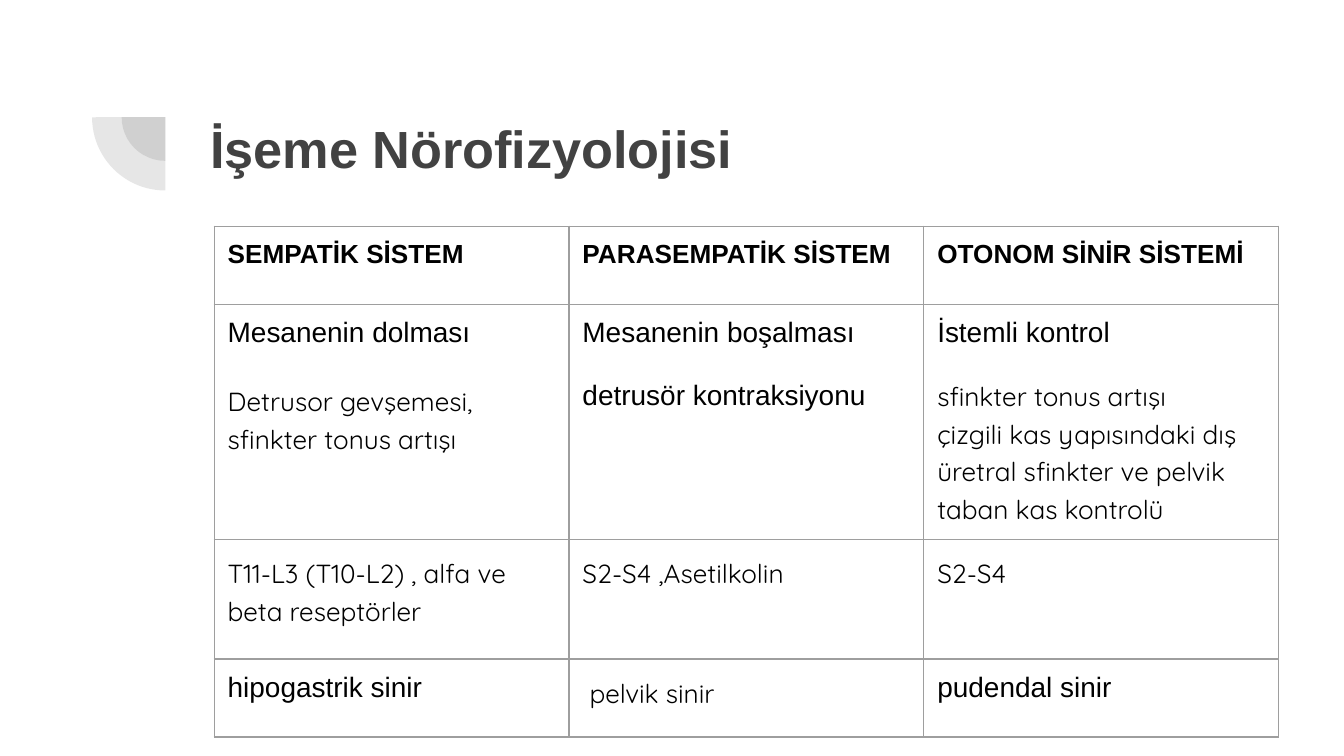
from lxml import etree
from pptx import Presentation
from pptx import util as u
from pptx.dml import color
from pptx.enum import shapes, text
from pptx.oxml import ns

GRID = 0.1
PADDING = 1


def cells(count):
    return u.Inches(count * GRID)


def rgb(value):
    return color.RGBColor.from_string(value)


def write(paragraph, content, font="Arial", size=15, bold=False, ink="000000",
          line_spacing=1, space_after=0):
    paragraph.alignment = text.PP_ALIGN.LEFT
    paragraph.line_spacing = line_spacing
    paragraph.space_before = u.Pt(0)
    paragraph.space_after = u.Pt(space_after)
    run = paragraph.add_run()
    run.text = content
    run.font.name = font
    run.font.size = u.Pt(size)
    run.font.bold = bold
    run.font.color.rgb = rgb(ink)


class SlideBuilder:
    GREY = "424242"
    BORDER = "9E9E9E"
    BORDER_WIDTH = 0.75

    def __init__(self, presentation):
        self.slide = presentation.slides.add_slide(presentation.slide_layouts[5])
        self.slide.background.fill.solid()
        self.slide.background.fill.fore_color.rgb = rgb("FFFFFF")

    def title(self, content, left, top, width, height):
        shape = self.slide.shapes.title
        shape.left, shape.top = cells(left), cells(top)
        shape.width, shape.height = cells(width), cells(height)
        frame = shape.text_frame
        frame.word_wrap = True
        frame.auto_size = text.MSO_AUTO_SIZE.NONE
        frame.vertical_anchor = text.MSO_ANCHOR.TOP
        frame.margin_left = frame.margin_right = cells(PADDING)
        frame.margin_top = frame.margin_bottom = cells(PADDING)
        write(frame.paragraphs[0], content, size=28, bold=True, ink=self.GREY)

    def quarter(self, center_x, center_y, radius, opacity):
        shape = self.slide.shapes.add_shape(
            shapes.MSO_SHAPE.PIE, cells(center_x - radius), cells(center_y - radius),
            cells(2 * radius), cells(2 * radius))
        shape.adjustments[0], shape.adjustments[1] = 54, 108
        shape.shadow.inherit = False
        shape.line.fill.background()
        shape.fill.solid()
        shape.fill.fore_color.rgb = rgb(self.GREY)
        ink = shape.fill._xPr.find(".//" + ns.qn("a:srgbClr"))
        etree.SubElement(ink, ns.qn("a:alpha"), val=str(opacity * 1000))

    def border(self, cell):
        properties = cell._tc.get_or_add_tcPr()
        for index, side in enumerate(("a:lnL", "a:lnR", "a:lnT", "a:lnB")):
            line = etree.Element(ns.qn(side), w=str(u.Pt(self.BORDER_WIDTH)))
            fill = etree.SubElement(line, ns.qn("a:solidFill"))
            etree.SubElement(fill, ns.qn("a:srgbClr"), val=self.BORDER)
            properties.insert(index, line)

    def table(self, rows, left, top, column_width, row_heights):
        column_count = len(rows[0])
        table = self.slide.shapes.add_table(
            len(rows), column_count, cells(left), cells(top),
            cells(column_width * column_count), cells(sum(row_heights))).table
        table.first_row = table.horz_banding = False
        for column in table.columns:
            column.width = cells(column_width)
        for row, height, contents in zip(table.rows, row_heights, rows):
            row.height = cells(height)
            for cell, paragraphs in zip(row.cells, contents):
                self.fill_cell(cell, paragraphs)

    def fill_cell(self, cell, paragraphs):
        cell.margin_left = cell.margin_right = cells(PADDING)
        cell.margin_top = cell.margin_bottom = cells(PADDING)
        cell.fill.background()
        self.border(cell)
        frame = cell.text_frame
        for index, (content, style) in enumerate(paragraphs):
            paragraph = frame.add_paragraph() if index else frame.paragraphs[0]
            write(paragraph, content, **style)


HEADER = dict(size=14, bold=True)
LEAD = dict(space_after=17)
PLAIN = dict()
NOTE = dict(font="Quicksand", size=14)
BODY = dict(NOTE, line_spacing=1.15, space_after=12)

ROWS = [
    [[("SEMPATİK SİSTEM", HEADER)],
     [("PARASEMPATİK SİSTEM", HEADER)],
     [("OTONOM SİNİR SİSTEMİ", HEADER)]],
    [[("Mesanenin dolması", LEAD),
      ("Detrusor gevşemesi, sfinkter tonus artışı", BODY)],
     [("Mesanenin boşalması", LEAD),
      ("detrusör kontraksiyonu", PLAIN)],
     [("İstemli kontrol", LEAD),
      ("sfinkter tonus artışı", NOTE),
      ("çizgili kas yapısındaki dış üretral sfinkter ve pelvik taban kas kontrolü", BODY)]],
    [[("T11-L3 (T10-L2) , alfa ve beta reseptörler", BODY)],
     [("S2-S4 ,Asetilkolin", BODY)],
     [("S2-S4", BODY)]],
    [[("hipogastrik sinir", PLAIN)],
     [(" pelvik sinir", BODY)],
     [("pudendal sinir", PLAIN)]],
]


def main():
    presentation = Presentation()
    presentation.slide_width = u.Inches(10)
    presentation.slide_height = presentation.slide_width * 9 // 16
    builder = SlideBuilder(presentation)
    for radius in (3.25, 5.45):
        builder.quarter(12.3, 8.72, radius, opacity=13)
    builder.table(ROWS, 15.94, 16.84, 26.4, [5.8, 17.4, 8.9, 5.8])
    builder.title("İşeme Nörofizyolojisi", 14.64, 7.66, 70.7, 6.7)
    presentation.save("out.pptx")


if __name__ == "__main__":
    main()
